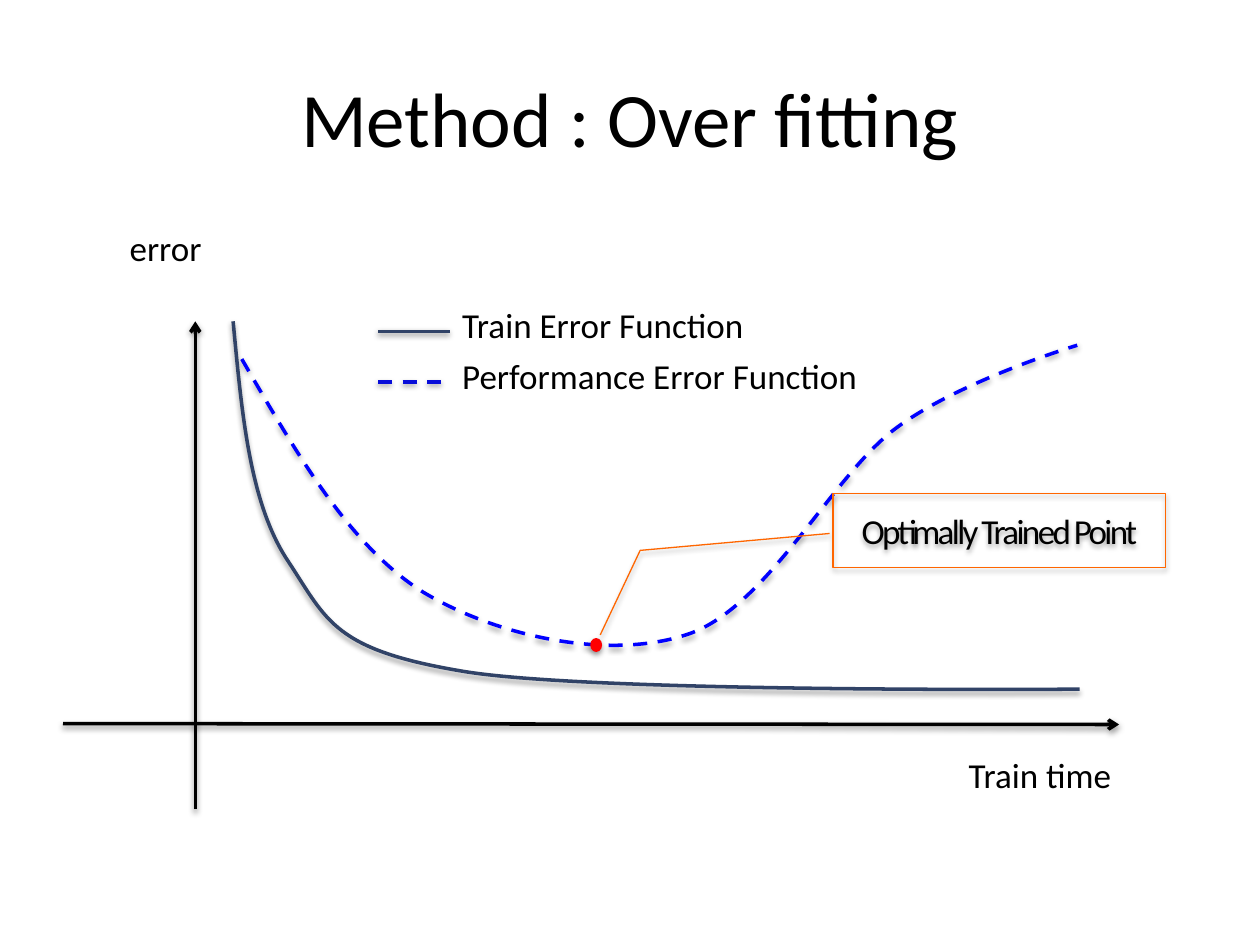
"""Build the over-fitting slide: two error curves over training time."""
from dataclasses import dataclass
from itertools import islice

from lxml import etree
from pptx import Presentation
from pptx.dml.color import RGBColor
from pptx.enum import dml, shapes, text
from pptx.oxml import parse_xml
from pptx.oxml.ns import nsdecls, qn
from pptx.util import Pt

Point = tuple[float, float]


@dataclass(frozen=True)
class Theme:
    """Hold the colours, font, type sizes and line widths."""
    ink: str = "000000"
    train: str = "314367"
    performance: str = "0000FF"
    performance_key: str = "080DD9"
    callout: str = "FF6600"
    optimum: str = "FF0000"
    font: str = "Calibri"
    title: float = 44
    label: float = 20
    stroke: float = 2
    hairline: float = 0.75


@dataclass(frozen=True)
class Label:
    """Describe a one-line text box."""
    wording: str
    left: float
    top: float
    width: float


@dataclass(frozen=True)
class Line:
    """Describe a straight line."""
    start: Point
    end: Point
    color: str
    dashed: bool = False
    arrow: bool = False


@dataclass(frozen=True)
class Curve:
    """Describe a chain of Bezier segments: a start, then three points each."""
    points: tuple[Point, ...]
    color: str
    dashed: bool = False


THEME = Theme()
LABEL_HEIGHT = 31.5

LINES = (
    Line((36, 413.5), (639.5, 414), THEME.ink, arrow=True),
    Line((111.6, 462.4), (111.6, 183.6), THEME.ink, arrow=True),
    Line((216, 189.3), (257, 189.3), THEME.train),
    Line((216, 218.3), (257, 218.3), THEME.performance_key, dashed=True),
)
LABELS = (
    Label("error", 67, 126, 56),
    Label("Train time", 546.5, 427, 97),
    Label("Train Error Function", 257, 170, 177),
    Label("Performance Error Function", 257, 198.8, 243),
)
PERFORMANCE = Curve((
    (138.2, 205.2),
    (169.2, 258.5), (199.4, 311.8), (241.9, 338.4),
    (285.1, 364.3), (349.2, 377.6), (393.8, 362.2),
    (439.2, 346.3), (475.2, 272.2), (511.9, 244.8),
    (548.6, 217.4), (615.6, 197.3), (615.6, 197.3),
), THEME.performance, dashed=True)
TRAIN = Curve((
    (133.2, 183.6),
    (138.2, 236.2), (142.6, 288), (164.9, 321.1),
    (187.2, 355), (190.8, 371.5), (265.7, 383.8),
    (341.3, 396), (617, 393.8), (617, 393.8),
), THEME.train)


def rgb(color: str) -> RGBColor:
    """Turn a hex string into a colour."""
    return RGBColor.from_string(color)


def add_shadow(sp, alpha: int = 38, dist: float = 1.6) -> None:
    """Give a shape a soft shadow that falls straight down."""
    sp._element.spPr.append(parse_xml(
        f'<a:effectLst {nsdecls("a")}><a:outerShdw blurRad="{Pt(3.1)}" '
        f'dist="{Pt(dist)}" dir="5400000" rotWithShape="0">'
        f'<a:srgbClr val="{THEME.ink}"><a:alpha val="{alpha * 1000}"/>'
        '</a:srgbClr></a:outerShdw></a:effectLst>'))


def set_line(sp, color: str, width: float, dashed: bool = False) -> None:
    """Set the colour, width and dash of an outline."""
    sp.line.color.rgb = rgb(color)
    sp.line.width = Pt(width)
    if dashed:
        sp.line.dash_style = dml.MSO_LINE.DASH


def write(tf, wording: str, *, size: float = THEME.label, align=None,
          anchor=None, spacing: float = 0) -> None:
    """Write one formatted paragraph into a text frame."""
    if anchor is not None:
        tf.vertical_anchor = anchor
    p = tf.paragraphs[0]
    p.alignment = align
    r = p.add_run()
    r.text = wording
    r.font.name = THEME.font
    r.font.size = Pt(size)
    r.font.color.rgb = rgb(THEME.ink)
    if spacing:
        r._r.get_or_add_rPr().set("spc", str(round(spacing * 100)))


def add_label(slide, label: Label) -> None:
    """Draw a text box that does not wrap."""
    sp = slide.shapes.add_textbox(
        *map(Pt, (label.left, label.top, label.width, LABEL_HEIGHT)))
    tf = sp.text_frame
    tf.word_wrap = False
    tf.auto_size = text.MSO_AUTO_SIZE.SHAPE_TO_FIT_TEXT
    write(tf, label.wording)


def add_line(slide, line: Line) -> None:
    """Draw a straight line, with an arrowhead at its end if asked."""
    sp = slide.shapes.add_connector(
        shapes.MSO_CONNECTOR.STRAIGHT, *map(Pt, line.start + line.end))
    set_line(sp, line.color, THEME.stroke, line.dashed)
    if line.arrow:
        etree.SubElement(sp.line._get_or_add_ln(), qn("a:tailEnd"), type="arrow")
    add_shadow(sp)


def add_curve(slide, curve: Curve) -> None:
    """Draw a freeform and join its points, three by three, into Beziers."""
    start, *rest = [(Pt(x), Pt(y)) for x, y in curve.points]
    builder = slide.shapes.build_freeform(*start)
    builder.add_line_segments(rest, close=False)
    sp = builder.convert_to_shape()
    outline = next(sp._element.iter(qn("a:path")))
    steps = iter(outline.findall(qn("a:lnTo")))
    while group := list(islice(steps, 3)):
        bezier = etree.SubElement(outline, qn("a:cubicBezTo"))
        for step in group:
            bezier.append(step[0])
            outline.remove(step)
    sp.fill.background()
    set_line(sp, curve.color, THEME.stroke, curve.dashed)
    add_shadow(sp)


def add_optimum(slide) -> None:
    """Mark the lowest point of the performance curve and name it."""
    dot = slide.shapes.add_shape(
        shapes.MSO_SHAPE.OVAL, *map(Pt, (337.7, 365, 6, 7.2)))
    dot.fill.solid()
    dot.fill.fore_color.rgb = rgb(THEME.optimum)
    set_line(dot, THEME.optimum, THEME.hairline)
    add_shadow(dot, alpha=35, dist=1.8)

    sp = slide.shapes.add_shape(
        shapes.MSO_SHAPE.LINE_CALLOUT_2, *map(Pt, (476, 282.2, 190, 42)))
    for i, value in enumerate((0.54, -0.01, 0.77, -0.58, 1.92, -0.7)):
        sp.adjustments[i] = value
    sp.fill.background()
    set_line(sp, THEME.callout, THEME.hairline)
    add_shadow(sp, alpha=35, dist=1.8)
    write(sp.text_frame, "Optimally Trained Point", spacing=-1.5,
          align=text.PP_ALIGN.CENTER, anchor=text.MSO_ANCHOR.MIDDLE)


def main() -> None:
    """Build and save the slide."""
    prs = Presentation()
    prs.slide_width, prs.slide_height = Pt(720), Pt(540)
    slide = prs.slides.add_slide(prs.slide_layouts[5])
    title = slide.shapes.title
    title.left, title.top, title.width, title.height = map(Pt, (36, 21.6, 648, 90))
    write(title.text_frame, "Method : Over fitting", size=THEME.title,
          align=text.PP_ALIGN.CENTER, anchor=text.MSO_ANCHOR.MIDDLE)
    for line in LINES:
        add_line(slide, line)
    for label in LABELS:
        add_label(slide, label)
    add_curve(slide, PERFORMANCE)
    add_optimum(slide)
    add_curve(slide, TRAIN)
    prs.save("out.pptx")


if __name__ == "__main__":
    main()
